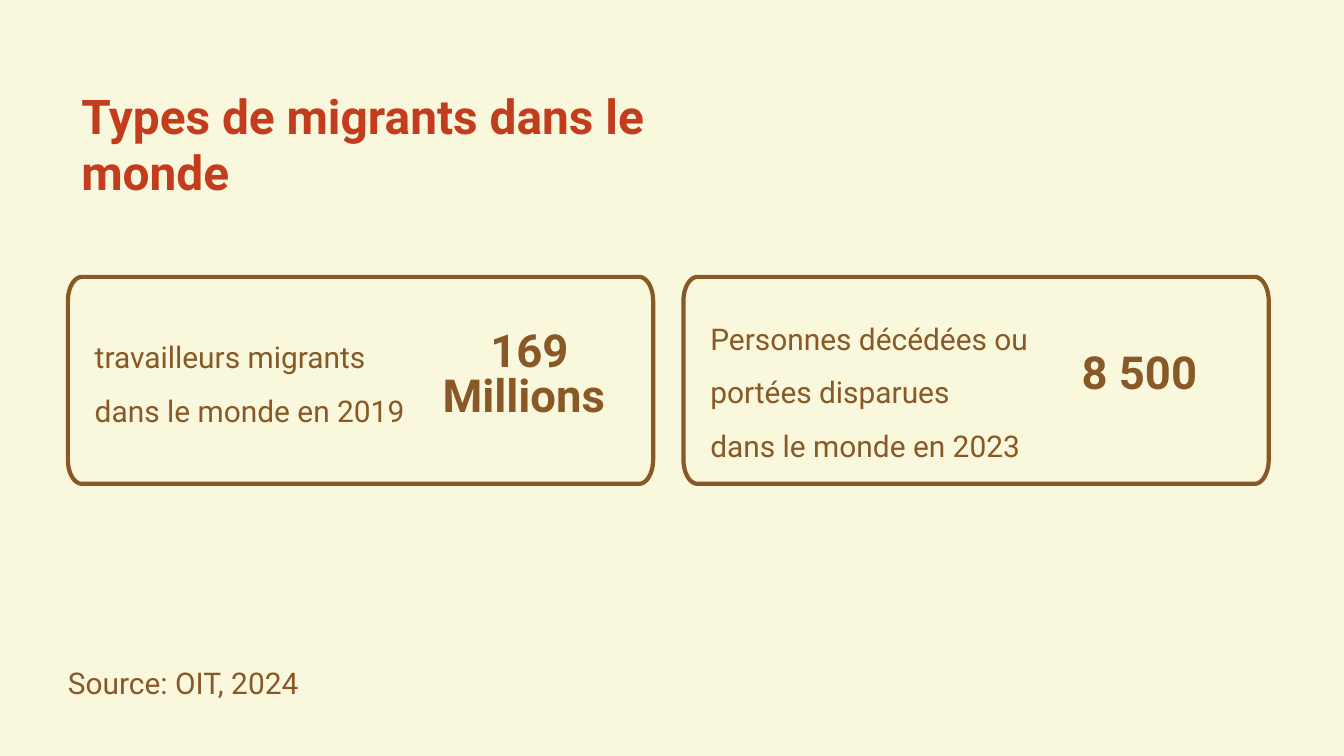
from dataclasses import dataclass
from math import cos, pi, sin

from pptx import Presentation
from pptx.dml.color import RGBColor
from pptx.enum.text import MSO_ANCHOR, MSO_AUTO_SIZE, PP_ALIGN
from pptx.util import Inches, Pt


@dataclass(frozen=True)
class Theme:
    """Colours, font and type sizes of the slide."""
    background: RGBColor = RGBColor.from_string("F9F7DC")
    accent: RGBColor = RGBColor.from_string("C43C1E")
    brown: RGBColor = RGBColor.from_string("885927")
    font: str = "Roboto"
    title_size: float = 51.2
    figure_size: float = 48.7
    body_size: float = 32
    title_leading: Pt = Pt(59.4)
    figure_leading: Pt = Pt(48.2)
    body_leading: float = 1.5
    border: float = 4.5


def write(frame, text, *, font, size, color, leading, bold=False, align=PP_ALIGN.LEFT):
    """Fill a text frame with one paragraph per line of text."""
    frame.margin_left = frame.margin_right = frame.margin_top = frame.margin_bottom = 0
    frame.word_wrap = True
    frame.auto_size = MSO_AUTO_SIZE.NONE
    frame.vertical_anchor = MSO_ANCHOR.TOP
    for index, line in enumerate(text.split("\n")):
        paragraph = frame.paragraphs[0] if index == 0 else frame.add_paragraph()
        paragraph.alignment = align
        paragraph.line_spacing = leading
        paragraph.space_before = paragraph.space_after = Pt(0)
        run = paragraph.add_run()
        run.text = line
        run.font.name = font
        run.font.size = Pt(size)
        run.font.bold = bold
        run.font.color.rgb = color


def rounded_outline(left, top, width, height, radius_x, radius_y, steps=12):
    """Return the points of a rectangle with elliptical corners."""
    right, bottom = left + width - radius_x, top + height - radius_y
    centres = [(right, bottom), (left + radius_x, bottom),
               (left + radius_x, top + radius_y), (right, top + radius_y)]
    return [
        (Inches(x + radius_x * cos(angle)), Inches(y + radius_y * sin(angle)))
        for quarter, (x, y) in enumerate(centres)
        for angle in (pi / 2 * (quarter + step / steps) for step in range(steps + 1))
    ]


class SlideBuilder:
    """Holds the theme and the current slide."""

    def __init__(self, slide, theme):
        self.slide = slide
        self.theme = theme
        slide.background.fill.solid()
        slide.background.fill.fore_color.rgb = theme.background

    def title(self, text, left, top, width, height):
        """Place and fill the title placeholder."""
        heading = self.slide.shapes.title
        heading.left, heading.top = Inches(left), Inches(top)
        heading.width, heading.height = Inches(width), Inches(height)
        write(heading.text_frame, text, font=self.theme.font, size=self.theme.title_size,
              color=self.theme.accent, leading=self.theme.title_leading, bold=True)

    def text(self, text, left, top, width, height, **style):
        """Add a text box, in body style unless told otherwise."""
        box = self.slide.shapes.add_textbox(
            Inches(left), Inches(top), Inches(width), Inches(height))
        body = dict(font=self.theme.font, size=self.theme.body_size,
                    color=self.theme.brown, leading=self.theme.body_leading)
        write(box.text_frame, text, **(body | style))

    def frame(self, left, top, width, height):
        """Draw an unfilled frame with elliptical corners."""
        start, *others = rounded_outline(left, top, width, height, 0.21, 0.36)
        builder = self.slide.shapes.build_freeform(*start)
        builder.add_line_segments(others, close=True)
        outline = builder.convert_to_shape()
        outline.shadow.inherit = False
        outline.fill.background()
        outline.line.color.rgb = self.theme.brown
        outline.line.width = Pt(self.theme.border)

    def card(self, left, label, label_top, label_height, figure, figure_top, figure_height):
        """Add a framed label with its key figure on the right."""
        self.frame(left, 4.12, 8.71, 3.08)
        self.text(figure, left + 5.32, figure_top, 3.1, figure_height,
                  size=self.theme.figure_size, leading=self.theme.figure_leading,
                  bold=True, align=PP_ALIGN.CENTER)
        self.text(label, left + 0.4, label_top, 4.92, label_height)


def main():
    """Build and save the slide."""
    presentation = Presentation()
    presentation.slide_width, presentation.slide_height = Inches(20), Inches(11.25)
    page = SlideBuilder(
        presentation.slides.add_slide(presentation.slide_layouts[5]), Theme())

    page.title("Types de migrants dans le monde", 1.21, 1.32, 8.52, 1.66)
    page.card(10.17, "Personnes décédées ou portées disparues\ndans le monde en 2023",
              4.5, 2.32, "8 500 ", 5.27, 0.67)
    page.card(1.01, "travailleurs migrants dans le monde en 2019",
              4.77, 1.52, "169\nMillions ", 4.93, 1.35)
    page.text("Source: OIT, 2024", 1.01, 9.62, 4.92, 0.71)

    presentation.save("out.pptx")


if __name__ == "__main__":
    main()
